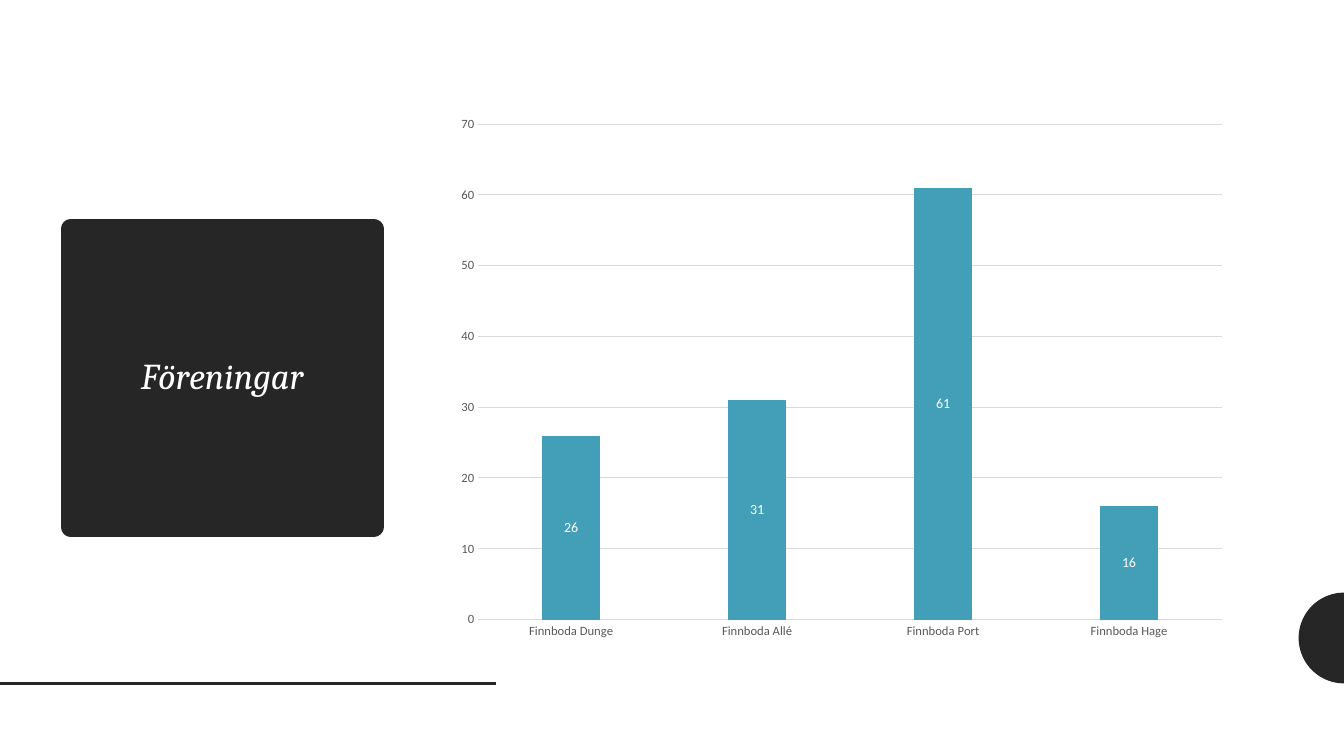
import math

import pptx
import pptx.chart.data
import pptx.dml.color
import pptx.enum.chart
import pptx.enum.shapes
import pptx.enum.text
import pptx.oxml
import pptx.util
from lxml import etree

# Grid of square cells, ten to the inch
COLS, ROWS = 133.33, 75
DARK, TEAL, WHITE, GRAY, PALE = "262626", "439EB7", "FFFFFF", "595959", "D9D9D9"
NS = "http://schemas.openxmlformats.org/drawingml/2006/main"
COUNTS = {
    "Finnboda Dunge": 26,
    "Finnboda Allé": 31,
    "Finnboda Port": 61,
    "Finnboda Hage": 16,
}


def cell(count):
    return pptx.util.Inches(count / 10)


def box(*cells):
    return [cell(count) for count in cells]


def tint(part, color):
    part.solid()
    part.fore_color.rgb = pptx.dml.color.RGBColor.from_string(color)


def style(item, **values):
    for key, value in values.items():
        setattr(item, key, value)


def ink(font, name, size, color, **more):
    style(font, name=name, size=pptx.util.Pt(size), **more)
    tint(font.fill, color)


def stroke(line, color, width):
    tint(line.fill, color)
    line.width = pptx.util.Pt(width)


def add_panel(slide, text, area):
    panel = slide.shapes.add_shape(pptx.enum.shapes.MSO_SHAPE.RECTANGLE, *box(*area))
    panel.shadow.inherit = False
    tint(panel.fill, DARK)
    # The thick line with round joins softens the corners
    stroke(panel.line, DARK, 13.75)
    etree.SubElement(panel.line._get_or_add_ln(), f"{{{NS}}}round")
    frame = panel.text_frame
    style(frame, word_wrap=True, vertical_anchor=pptx.enum.text.MSO_ANCHOR.MIDDLE)
    para = frame.paragraphs[0]
    style(para, alignment=pptx.enum.text.PP_ALIGN.CENTER, line_spacing=0.9)
    run = para.add_run()
    run.text = text
    ink(run.font, "Cambria", 26, WHITE, italic=True)


def add_rule(slide, start, end, row):
    kind = pptx.enum.shapes.MSO_CONNECTOR.STRAIGHT
    rule = slide.shapes.add_connector(kind, *box(start, row, end, row))
    stroke(rule.line, DARK, 2)
    etree.SubElement(rule._element.spPr, f"{{{NS}}}effectLst")


def add_half(slide, col, row, radius, steps=48):
    # Left half of a disc, from its top round to its foot
    turns = [math.pi * (0.5 + step / steps) for step in range(steps + 1)]
    points = [
        (cell(col + radius * math.cos(turn)), cell(row - radius * math.sin(turn)))
        for turn in turns
    ]
    path = slide.shapes.build_freeform(*points[0])
    path.add_line_segments(points[1:], close=True)
    half = path.convert_to_shape()
    half.shadow.inherit = False
    tint(half.fill, DARK)
    half.line.fill.background()


def add_bars(slide, counts, area):
    data = pptx.chart.data.CategoryChartData()
    data.categories = list(counts)
    data.add_series("Series 1", list(counts.values()))
    kind = pptx.enum.chart.XL_CHART_TYPE.COLUMN_CLUSTERED
    chart = slide.shapes.add_chart(kind, *box(*area), data).chart
    style(chart, has_legend=False, has_title=False)
    ink(chart.font, "Calibri", 10, "000000")

    # Columns and their values
    plot = chart.plots[0]
    style(plot, gap_width=219, overlap=-27, vary_by_categories=False, has_data_labels=True)
    tint(plot.series[0].format.fill, TEAL)
    labels = plot.data_labels
    style(labels, show_value=True, position=pptx.enum.chart.XL_LABEL_POSITION.CENTER)
    ink(labels.font, "Calibri", 10, WHITE)

    # Axes and grid lines
    none = pptx.enum.chart.XL_TICK_MARK.NONE
    for axis in (chart.category_axis, chart.value_axis):
        style(axis, major_tick_mark=none, minor_tick_mark=none)
        ink(axis.tick_labels.font, "Calibri", 9, GRAY)
    stroke(chart.category_axis.format.line, PALE, 0.75)
    scale = chart.value_axis
    style(scale, minimum_scale=0, maximum_scale=70, major_unit=10, has_major_gridlines=True)
    scale.format.line.fill.background()
    stroke(scale.major_gridlines.format.line, PALE, 0.75)


def main():
    deck = pptx.Presentation()
    style(deck, slide_width=cell(COLS), slide_height=cell(ROWS))
    slide = deck.slides.add_slide(deck.slide_layouts[6])
    tint(slide.background.fill, WHITE)

    # Dark marks at the edges
    add_half(slide, COLS, 63.3, 4.5)
    add_rule(slide, 0, 49.2, 67.8)

    # Heading and chart
    add_panel(slide, "Föreningar", (7, 22.7, 30.1, 29.6))
    add_bars(slide, COUNTS, (44.2, 10.5, 78.6, 53.9))
    deck.save("out.pptx")


if __name__ == "__main__":
    main()
